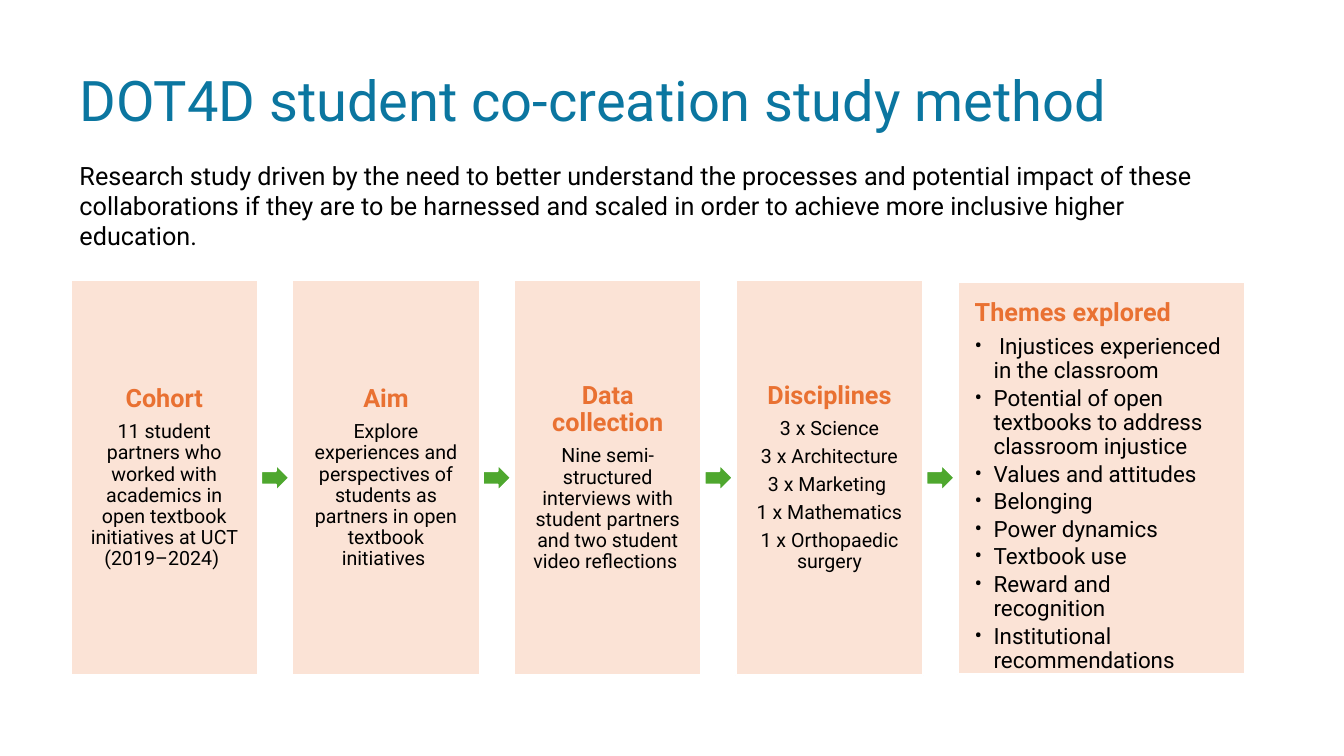
from lxml import etree
from pptx import Presentation
from pptx.dml.color import RGBColor
from pptx.enum import shapes, text
from pptx.oxml.ns import qn
from pptx.util import Pt

FONT = "Roboto"
BLUE = RGBColor(0x0B, 0x76, 0xA0)
ORANGE = RGBColor(0xE9, 0x71, 0x32)
PEACH = RGBColor(0xFB, 0xE3, 0xD6)
GREEN = RGBColor(0x4E, 0xA7, 0x2E)
BLACK = RGBColor(0, 0, 0)
WHITE = RGBColor(0xFF, 0xFF, 0xFF)

PANEL_TOP, PANEL_WIDTH, PANEL_HEIGHT = 200.2, 133.9, 282.2
FIRST_LEFT, PANEL_PITCH = 50.4, 158.4
ARROW_WIDTH, ARROW_HEIGHT = 20.2, 19.4
PANEL_INSET = 12.25
BULLET_INDENT = 13.5

TITLE = "DOT4D student co-creation study method"
INTRODUCTION = (
    "Research study driven by the need to better understand the processes and "
    "potential impact of these collaborations if they are to be harnessed and "
    "scaled in order to achieve more inclusive higher education."
)
STEPS = [
    ("Cohort", ["11 student partners who worked with academics in open textbook "
                "initiatives at UCT (2019–2024) "]),
    ("Aim", ["Explore experiences and perspectives of students as partners in "
             "open textbook initiatives "]),
    ("Data collection", ["Nine semi-structured interviews with student partners "
                         "and two student video reflections "]),
    ("Disciplines", ["3 x Science", "3 x Architecture", "3 x Marketing ",
                     "1 x Mathematics", "1 x Orthopaedic surgery"]),
]
THEMES = [
    " Injustices experienced in the classroom",
    "Potential of open textbooks to address classroom injustice",
    "Values and attitudes",
    "Belonging",
    "Power dynamics",
    "Textbook use",
    "Reward and recognition",
    "Institutional recommendations",
]


def write_paragraph(paragraph, words, size, color, bold=False, spacing=1.0, after=0,
                    alignment=text.PP_ALIGN.LEFT):
    paragraph.text = words
    paragraph.alignment = alignment
    paragraph.line_spacing = spacing
    paragraph.space_after = Pt(after)
    paragraph.font.name = FONT
    paragraph.font.size = Pt(size)
    paragraph.font.bold = bold
    paragraph.font.color.rgb = color


def add_bullet(paragraph):
    properties = paragraph._p.get_or_add_pPr()
    properties.set("marL", str(Pt(BULLET_INDENT)))
    properties.set("indent", str(-Pt(BULLET_INDENT)))
    etree.SubElement(properties, qn("a:buFont")).set("typeface", FONT)
    etree.SubElement(properties, qn("a:buChar")).set("char", "•")


def add_text(slide, box, words, size, color, anchor, spacing=1.0):
    frame = slide.shapes.add_textbox(*map(Pt, box)).text_frame
    frame.word_wrap = True
    frame.vertical_anchor = anchor
    write_paragraph(frame.paragraphs[0], words, size, color, spacing=spacing)


def add_filled_shape(slide, kind, box, color):
    shape = slide.shapes.add_shape(kind, *map(Pt, box))
    shape.shadow.inherit = False
    shape.fill.solid()
    shape.fill.fore_color.rgb = color
    shape.line.color.rgb = WHITE
    shape.line.width = Pt(1.5)
    return shape


def add_panel(slide, box, heading, anchor, alignment):
    """Draw a peach box with its orange heading and return its text frame."""
    panel = add_filled_shape(slide, shapes.MSO_SHAPE.RECTANGLE, box, PEACH)
    frame = panel.text_frame
    frame.word_wrap = True
    frame.vertical_anchor = anchor
    frame.margin_left = frame.margin_right = Pt(PANEL_INSET)
    frame.margin_top = frame.margin_bottom = Pt(PANEL_INSET)
    write_paragraph(frame.paragraphs[0], heading, 18, ORANGE, True, 0.9, 6.3, alignment)
    return frame


def add_step(slide, box, heading, lines):
    """Draw a centred panel and the arrow that leads to the next one."""
    center = text.PP_ALIGN.CENTER
    frame = add_panel(slide, box, heading, text.MSO_ANCHOR.MIDDLE, center)
    for line in lines:
        write_paragraph(frame.add_paragraph(), line, 14, BLACK, False, 0.9, 4.9, center)
    left, top, width, height = box
    gap = PANEL_PITCH - width
    arrow_box = (left + width + (gap - ARROW_WIDTH) / 2,
                 top + (height - ARROW_HEIGHT) / 2, ARROW_WIDTH, ARROW_HEIGHT)
    add_filled_shape(slide, shapes.MSO_SHAPE.RIGHT_ARROW, arrow_box, GREEN)


def add_themes(slide, box):
    frame = add_panel(slide, box, "Themes explored", text.MSO_ANCHOR.TOP,
                      text.PP_ALIGN.LEFT)
    for theme in THEMES:
        paragraph = frame.add_paragraph()
        write_paragraph(paragraph, theme, 16, BLACK, spacing=0.9, after=2.4)
        add_bullet(paragraph)


def main():
    presentation = Presentation()
    presentation.slide_width, presentation.slide_height = Pt(960), Pt(540)
    slide = presentation.slides.add_slide(presentation.slide_layouts[6])

    add_text(slide, (49.7, 39.6, 780, 69), TITLE, 40, BLUE,
             text.MSO_ANCHOR.MIDDLE, 0.9)
    add_text(slide, (49.7, 110.9, 840, 72.7), INTRODUCTION, 18, BLACK,
             text.MSO_ANCHOR.TOP)
    for index, (heading, lines) in enumerate(STEPS):
        left = FIRST_LEFT + index * PANEL_PITCH
        add_step(slide, (left, PANEL_TOP, PANEL_WIDTH, PANEL_HEIGHT), heading, lines)
    add_themes(slide, (FIRST_LEFT + len(STEPS) * PANEL_PITCH, 201.6, 205.2, 280))

    presentation.save("out.pptx")


if __name__ == "__main__":
    main()
